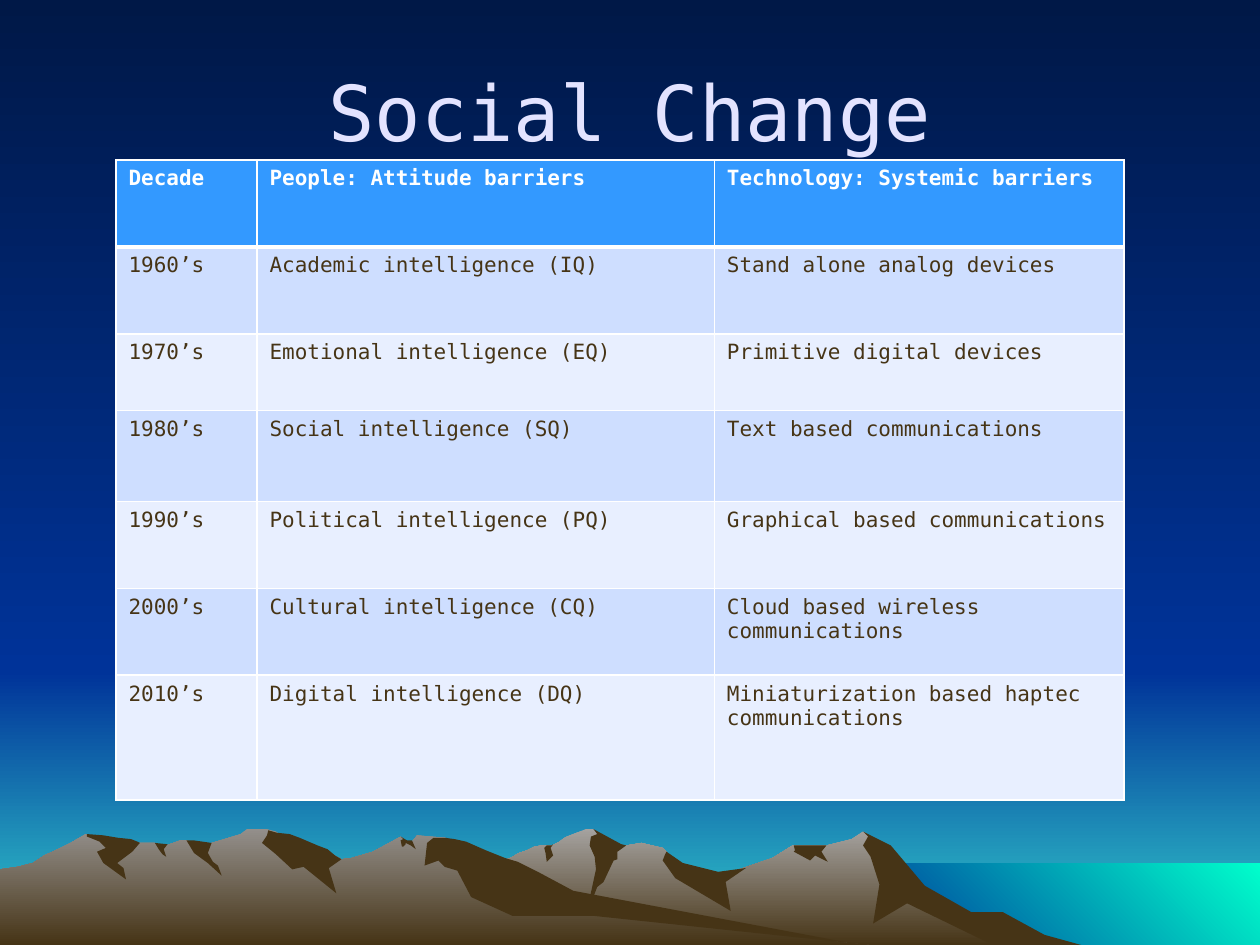
import pptx
import pptx.dml.color
import pptx.enum.text
import pptx.oxml
import pptx.oxml.ns
import pptx.util

RGBColor = pptx.dml.color.RGBColor
Inches = pptx.util.Inches
Pt = pptx.util.Pt

NIGHT = RGBColor(0x00, 0x18, 0x47)
BLUE = RGBColor(0x00, 0x33, 0x99)
HORIZON = RGBColor(0x33, 0xCC, 0xCC)
AQUA = RGBColor(0x00, 0xFF, 0xCC)
ROCK = RGBColor(0xA5, 0xA2, 0x9F)
STONE = RGBColor(0x93, 0x8F, 0x8B)
BROWN = RGBColor(0x46, 0x34, 0x16)
LAVENDER = RGBColor(0xE3, 0xE3, 0xFF)
WHITE = RGBColor(0xFF, 0xFF, 0xFF)
HEADER = RGBColor(0x33, 0x99, 0xFF)
BAND_DARK = RGBColor(0xCE, 0xDE, 0xFF)
BAND_LIGHT = RGBColor(0xE8, 0xEF, 0xFF)

DOWN, UP_RIGHT = 270, 45
HUNDREDTH = Inches(0.01)

RIGHT_RANGE = [
    (802, 740), (778, 727), (764, 723), (723, 698), (702, 671), (685, 660), (676, 666),
    (656, 671), (629, 671), (613, 681), (566, 697), (536, 690), (529, 676), (526, 673),
    (509, 669), (497, 671), (486, 673), (474, 661), (471, 658), (465, 658), (450, 664),
    (448, 665), (444, 668), (438, 671), (430, 671), (424, 672), (418, 675), (412, 677),
    (405, 681), (399, 683), (394, 685), (355, 698), (327, 709), (277, 739), (258, 750),
    (820, 750),
]
LEFT_RANGE = [
    (690, 750), (667, 748), (432, 712), (354, 665), (331, 663), (327, 668), (323, 668),
    (318, 664), (296, 676), (279, 681), (271, 682), (260, 676), (236, 681), (223, 663),
    (219, 660), (212, 658), (196, 658), (191, 662), (178, 666), (168, 669), (160, 671),
    (148, 667), (143, 667), (132, 671), (128, 671), (123, 669), (111, 669), (94, 671),
    (68, 662), (56, 669), (46, 674), (35, 679), (26, 685), (14, 688), (0, 690), (0, 750),
]
RIGHT_SHADOWS = [
    [(796, 724), (771, 724), (734, 703), (707, 671), (685, 660), (689, 664), (685, 671),
     (691, 680), (698, 702), (693, 733), (720, 717), (788, 750), (858, 750), (829, 742)],
    [(471, 658), (474, 662), (469, 664), (468, 671), (472, 680), (473, 690), (465, 727),
     (474, 704), (479, 700), (487, 683), (490, 682), (490, 676), (497, 671), (493, 670)],
    [(529, 676), (528, 678), (526, 683), (536, 697), (580, 723), (576, 700), (592, 689),
     (570, 692), (542, 685)],
    [(650, 671), (630, 671), (631, 675), (630, 676), (643, 683), (647, 679), (657, 684),
     (652, 676), (656, 671)],
    [(433, 677), (432, 673), (434, 671), (438, 671), (439, 670), (437, 673), (439, 679),
     (434, 684)],
]
LEFT_SHADOWS = [
    [(212, 663), (208, 669), (219, 678), (232, 690), (241, 688), (267, 709), (261, 689),
     (271, 682), (266, 679), (260, 674), (252, 671), (238, 665), (230, 662), (220, 661),
     (213, 659)],
    [(370, 668), (361, 666), (354, 665), (344, 665), (339, 669), (337, 687), (348, 683),
     (353, 688), (363, 691), (374, 712), (407, 727), (472, 727), (690, 750), (683, 750),
     (455, 707), (427, 692), (411, 684), (401, 681), (386, 675)],
    [(318, 667), (320, 666), (318, 664), (323, 667), (327, 667), (330, 674), (326, 671),
     (322, 669), (322, 670), (320, 672), (319, 672)],
    [(154, 667), (168, 669), (165, 677), (169, 684), (173, 687), (176, 695), (165, 685),
     (154, 677), (148, 667)],
    [(133, 670), (130, 674), (132, 680), (129, 678), (126, 674), (123, 669)],
    [(109, 668), (111, 669), (105, 676), (93, 685), (98, 689), (100, 698), (82, 685),
     (77, 676), (84, 673), (79, 668), (69, 664), (69, 662), (82, 663), (94, 665),
     (104, 666)],
]

COLUMN_WIDTHS = [1.12, 3.63, 3.25]
ROW_HEIGHTS = [0.69, 0.69, 0.61, 0.72, 0.69, 0.69, 0.99]
DECADES = [
    ("Decade", "People: Attitude barriers", "Technology: Systemic barriers"),
    ("1960’s", "Academic intelligence (IQ)", "Stand alone analog devices"),
    ("1970’s", "Emotional intelligence (EQ)", "Primitive digital devices"),
    ("1980’s", "Social intelligence (SQ)", "Text based communications"),
    ("1990’s", "Political intelligence (PQ)", "Graphical based communications"),
    ("2000’s", "Cultural intelligence (CQ)", "Cloud based wireless communications"),
    ("2010’s", "Digital intelligence (DQ)", "Miniaturization based haptec communications"),
]


class SlideBuilder:
    """Hold the text style and the current slide, and add elements to it."""

    def __init__(self, slide, font_name):
        self.slide = slide
        self.font_name = font_name

    def paint_gradient(self, fill, colors, angle):
        fill.gradient()
        fill.gradient_angle = angle
        for position, (stop, color) in enumerate(zip(fill.gradient_stops, colors)):
            stop.color.rgb = color
            stop.position = position

    def add_words(self, paragraph, words, color, alignment, **style):
        paragraph.alignment = alignment
        run = paragraph.add_run()
        run.text = words
        for attribute, value in {"name": self.font_name, **style}.items():
            setattr(run.font, attribute, value)
        run.font.color.rgb = color

    def outline(self, points, colors, angle=DOWN):
        builder = self.slide.shapes.build_freeform(*points[0], scale=HUNDREDTH)
        builder.add_line_segments(points[1:], close=True)
        scenery = builder.convert_to_shape()
        scenery.shadow.inherit = False
        scenery.line.fill.background()
        if len(colors) > 1:
            self.paint_gradient(scenery.fill, colors, angle)
        else:
            scenery.fill.solid()
            scenery.fill.fore_color.rgb = colors[0]

    def band(self, left, top, right, bottom, colors, angle=DOWN):
        corners = [(left, top), (right, top), (right, bottom), (left, bottom)]
        self.outline(corners, colors, angle)

    def title(self, words, left, top, width, height):
        heading = self.slide.shapes.add_textbox(
            Inches(left), Inches(top), Inches(width), Inches(height)).text_frame
        heading.word_wrap = True
        heading.vertical_anchor = pptx.enum.text.MSO_ANCHOR.MIDDLE
        self.add_words(heading.paragraphs[0], words, LAVENDER,
                       pptx.enum.text.PP_ALIGN.CENTER, size=Pt(44))

    def border(self, cell, widths):
        properties = cell._tc.get_or_add_tcPr()
        for side, width in widths.items():
            properties.append(pptx.oxml.parse_xml(
                f'<a:ln{side} {pptx.oxml.ns.nsdecls("a")} w="{Pt(width)}">'
                f'<a:solidFill><a:srgbClr val="{WHITE}"/></a:solidFill></a:ln{side}>'))

    def table(self, rows, left, top, widths, heights):
        grid = self.slide.shapes.add_table(
            len(rows), len(widths), Inches(left), Inches(top),
            Inches(sum(widths)), Inches(sum(heights))).table
        for column, width in zip(grid.columns, widths):
            column.width = Inches(width)
        for index, (row, height, entries) in enumerate(zip(grid.rows, heights, rows)):
            row.height = Inches(height)
            is_header = index == 0
            band = HEADER if is_header else BAND_DARK if index % 2 else BAND_LIGHT
            sides = {"L": 1, "R": 1, "T": 3 if index == 1 else 1, "B": 3 if is_header else 1}
            for cell, words in zip(row.cells, entries):
                self.border(cell, sides)
                cell.fill.solid()
                cell.fill.fore_color.rgb = band
                self.add_words(cell.text_frame.paragraphs[0], words,
                               WHITE if is_header else BROWN,
                               pptx.enum.text.PP_ALIGN.LEFT, size=Pt(12), bold=is_header)


def main():
    deck = pptx.Presentation()
    deck.slide_width, deck.slide_height = Inches(10), Inches(7.5)
    builder = SlideBuilder(deck.slides.add_slide(deck.slide_layouts[6]), "DejaVu Sans Mono")
    builder.paint_gradient(builder.slide.background.fill, (NIGHT, BLUE), DOWN)
    builder.band(0, 533, 1000, 750, (BLUE, HORIZON))
    builder.band(0, 0, 1000, 533, (NIGHT, BLUE))
    builder.band(683, 685, 1000, 750, (BLUE, AQUA), UP_RIGHT)
    builder.outline(RIGHT_RANGE, (ROCK, BROWN))
    for shadow in RIGHT_SHADOWS:
        builder.outline(shadow, (BROWN,))
    builder.outline(LEFT_RANGE, (STONE, BROWN))
    for shadow in LEFT_SHADOWS:
        builder.outline(shadow, (BROWN,))
    builder.title("Social Change", 0.5, 0.25, 9, 1.25)
    builder.table(DECADES, 0.92, 1.27, COLUMN_WIDTHS, ROW_HEIGHTS)
    deck.save("out.pptx")


if __name__ == "__main__":
    main()
